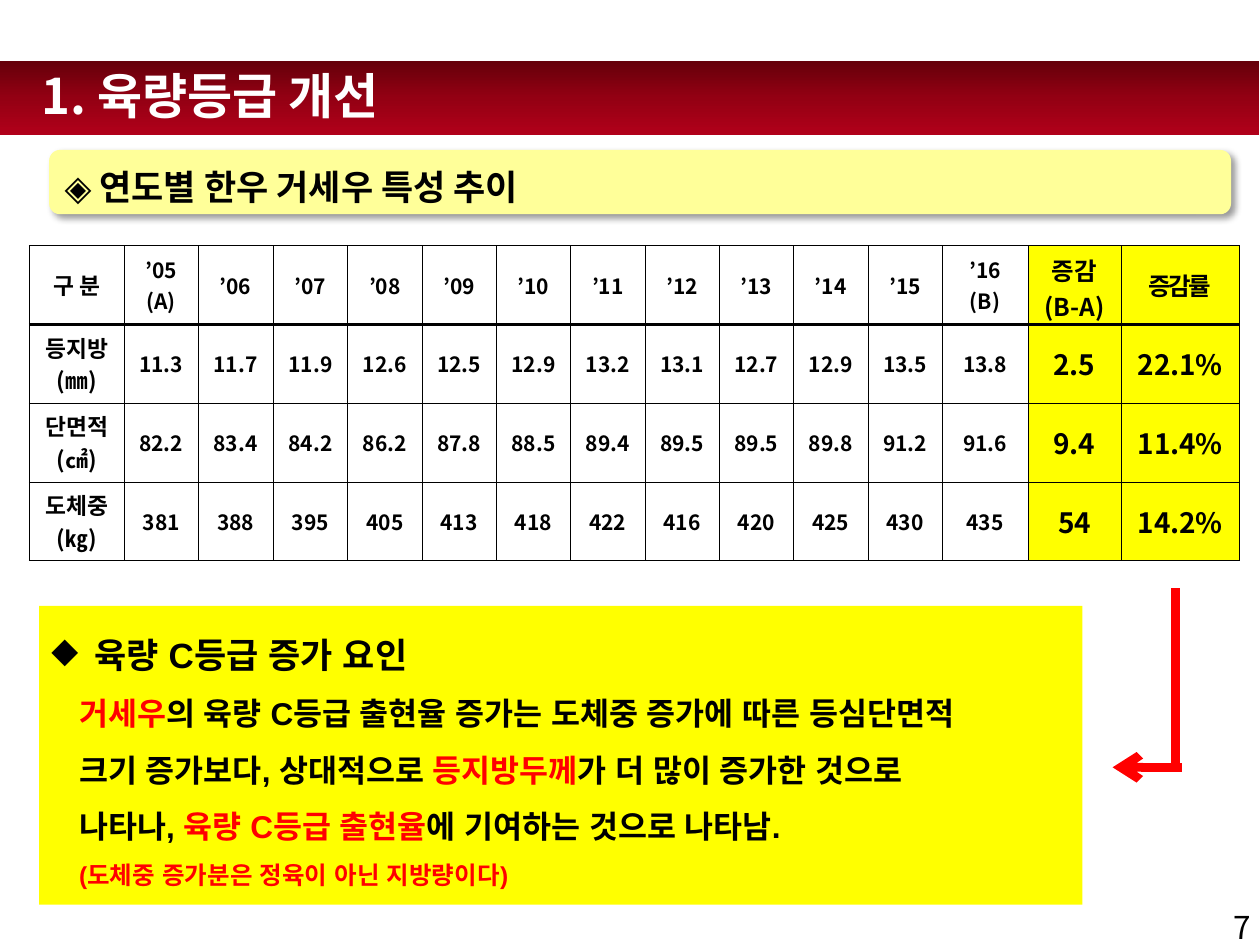
import lxml.etree
import pptx
import pptx.dml.color
import pptx.enum.shapes
import pptx.enum.text
import pptx.oxml.ns
import pptx.util

SLIDE_WIDTH, SLIDE_HEIGHT = 10, 7.5
COLORS = {
    "black": "000000", "white": "FFFFFF", "red": "FF0000", "yellow": "FFFF00",
    "cream": "FFFF99", "maroon": "65000A", "wine": "940013", "crimson": "B1001A",
}
KOREAN = "Noto Sans CJK KR"
SHAPES = pptx.enum.shapes.MSO_SHAPE
ALIGN = pptx.enum.text.PP_ALIGN
ANCHOR = pptx.enum.text.MSO_ANCHOR
THIN, THICK = 0.28, 1.98
COLUMN_SHARES = [7.6, 5.8, 6] + [5.9] * 9 + [6.8, 7.4, 9.4]
ROW_SHARE = 8.33
FIRST_CHANGE_COLUMN = 13
ROWS = [
    ["구 분", "’05\n(A)", *[f"’{year:02}" for year in range(6, 16)],
     "’16\n(B)", "증감\n(B-A)", "증감률"],
    ["등지방\n(㎜)", "11.3", "11.7", "11.9", "12.6", "12.5", "12.9", "13.2", "13.1",
     "12.7", "12.9", "13.5", "13.8", "2.5", "22.1%"],
    ["단면적\n(㎠)", "82.2", "83.4", "84.2", "86.2", "87.8", "88.5", "89.4", "89.5",
     "89.5", "89.8", "91.2", "91.6", "9.4", "11.4%"],
    ["도체중\n(㎏)", "381", "388", "395", "405", "413", "418", "422", "416",
     "420", "425", "430", "435", "54", "14.2%"],
]
CAUSES = [
    [("거세우", "red"), ("의 육량 C등급 출현율 증가는 도체중 증가에 따른 등심단면적", "black")],
    [("크기 증가보다, 상대적으로 ", "black"), ("등지방두께", "red"),
     ("가 더 많이 증가한 것으로", "black")],
    [("나타나, ", "black"), ("육량 C등급 출현율", "red"),
     ("에 기여하는 것으로 나타남.", "black")],
]


def across(percent):
    return pptx.util.Inches(SLIDE_WIDTH * percent / 100)


def down(percent):
    return pptx.util.Inches(SLIDE_HEIGHT * percent / 100)


def place(left, top, width, height):
    return across(left), down(top), across(width), down(height)


def rgb(color):
    return pptx.dml.color.RGBColor.from_string(COLORS[color])


def add_xml(parent, tag, **attributes):
    return lxml.etree.SubElement(parent, pptx.oxml.ns.qn(tag), attributes)


def add_span(para, text, size, color="black", font=KOREAN, bold=True, spacing=0):
    span = para.add_run()
    span.text = text
    span.font.size = pptx.util.Pt(size)
    span.font.bold = bold
    span.font.color.rgb = rgb(color)
    span.font.name = font
    properties = span.font._element
    add_xml(properties, "a:ea", typeface=font)
    if spacing:
        properties.set("spc", str(int(spacing * 100)))


def add_para(frame, spans, size, align=ALIGN.LEFT, line_spacing=None, indent=0,
             bullet=None, **style):
    first = frame.paragraphs[0]
    para = frame.add_paragraph() if first.runs else first
    para.alignment = align
    if line_spacing:
        para.line_spacing = line_spacing
    properties = para._p.get_or_add_pPr()
    if indent:
        properties.set("marL", str(across(indent)))
    if bullet:
        properties.set("indent", str(-across(indent)))
        add_xml(properties, "a:buChar", char=bullet)
    for text, color in spans:
        add_span(para, text, size, color, **style)


def add_text(page, bounds, text, size, color, align=ALIGN.LEFT, inset=1, bold=True):
    frame = page.shapes.add_textbox(*bounds).text_frame
    frame.word_wrap = True
    frame.vertical_anchor = ANCHOR.MIDDLE
    frame.margin_left = across(inset)
    add_para(frame, [(text, color)], size, align, bold=bold)


def add_box(page, kind, bounds, fill):
    box = page.shapes.add_shape(kind, *bounds)
    box.shadow.inherit = False
    box.fill.solid()
    box.fill.fore_color.rgb = rgb(fill)
    box.line.fill.background()
    box.text_frame.word_wrap = True
    return box


def add_banner(page):
    banner = add_box(page, SHAPES.RECTANGLE, place(47, -56.27, 5.9, 133.33), "maroon")
    banner.rotation = 90
    banner.fill.gradient()
    banner.fill.gradient_angle = 0
    stops = banner._element.spPr.find(".//" + pptx.oxml.ns.qn("a:gsLst"))
    stops.clear()
    for position, color in [(0, "maroon"), (50, "wine"), (100, "crimson")]:
        stop = add_xml(stops, "a:gs", pos=str(position * 1000))
        add_xml(stop, "a:srgbClr", val=COLORS[color])


def add_heading(page):
    box = add_box(page, SHAPES.ROUNDED_RECTANGLE, place(3.9, 15.87, 93.8, 6.8), "cream")
    effects = box._element.spPr.find(pptx.oxml.ns.qn("a:effectLst"))
    shadow = add_xml(effects, "a:outerShdw", blurRad=str(pptx.util.Pt(4)),
                     dist=str(pptx.util.Pt(3)), dir=str(45 * 60000), rotWithShape="0")
    shade = add_xml(shadow, "a:srgbClr", val=COLORS["black"])
    add_xml(shade, "a:alpha", val="40000")
    box.text_frame.vertical_anchor = ANCHOR.MIDDLE
    add_para(box.text_frame, [("◈ 연도별 한우 거세우 특성 추이", "black")], 20,
             line_spacing=1.2)


def set_borders(cell, top, bottom):
    properties = cell._tc.get_or_add_tcPr()
    for side, width in [("L", THIN), ("R", THIN), ("T", top), ("B", bottom)]:
        line = add_xml(properties, f"a:ln{side}", w=str(pptx.util.Pt(width)))
        fill = add_xml(line, "a:solidFill")
        add_xml(fill, "a:srgbClr", val=COLORS["black"])


def cell_size(row, column):
    if column == 0:
        return 13
    if column < FIRST_CHANGE_COLUMN:
        return 12
    return 14 if row == 0 else 16


def fill_cell(cell, text, row, column):
    set_borders(cell, THICK if row == 1 else THIN, THICK if row == 0 else THIN)
    if column >= FIRST_CHANGE_COLUMN:
        cell.fill.solid()
        cell.fill.fore_color.rgb = rgb("yellow")
    else:
        cell.fill.background()
    cell.margin_left = cell.margin_right = across(0.2)
    cell.vertical_anchor = ANCHOR.MIDDLE
    spacing = -1.5 if text == "증감률" else 0
    for line in text.split("\n"):
        add_para(cell.text_frame, [(line, "black")], cell_size(row, column),
                 ALIGN.CENTER, spacing=spacing)


def add_trend_table(page):
    bounds = place(2.3, 26, sum(COLUMN_SHARES), ROW_SHARE * len(ROWS))
    table = page.shapes.add_table(len(ROWS), len(COLUMN_SHARES), *bounds).table
    table.first_row = table.horz_banding = False
    for column, share in zip(table.columns, COLUMN_SHARES):
        column.width = across(share)
    for row, texts in enumerate(ROWS):
        table.rows[row].height = down(ROW_SHARE)
        for column, text in enumerate(texts):
            fill_cell(table.cell(row, column), text, row, column)


def add_causes(page):
    box = add_box(page, SHAPES.RECTANGLE, place(3.1, 64.13, 82.8, 31.6), "yellow")
    frame = box.text_frame
    frame.vertical_anchor = ANCHOR.TOP
    style = {"align": ALIGN.JUSTIFY, "line_spacing": 1.5, "font": "Arial"}
    add_para(frame, [("육량 C등급 증가 요인", "black")], 20, indent=3.4, bullet="◆", **style)
    for spans in CAUSES:
        add_para(frame, spans, 18, indent=2.2, **style)
    add_para(frame, [("(도체중 증가분은 정육이 아닌 지방량이다)", "red")], 14,
             indent=2.2, **style)


def add_line(group, start, end, arrow=False):
    line = group.shapes.add_connector(
        pptx.enum.shapes.MSO_CONNECTOR.STRAIGHT,
        across(start[0]), down(start[1]), across(end[0]), down(end[1]))
    line.line.color.rgb = rgb("red")
    line.line.width = pptx.util.Pt(5)
    if arrow:
        add_xml(line.line._get_or_add_ln(), "a:tailEnd", type="arrow")
    add_xml(line._element.spPr, "a:effectLst")


def add_bent_arrow(page):
    group = page.shapes.add_group_shape()
    add_line(group, (93.3, 62.27), (93.3, 81.07))
    add_line(group, (93.8, 81.2), (88.3, 81.2), arrow=True)


def main():
    deck = pptx.Presentation()
    deck.slide_width, deck.slide_height = across(100), down(100)
    page = deck.slides.add_slide(deck.slide_layouts[6])
    add_text(page, place(77, 95.47, 23.3, 5.33), "7", 18, "black", ALIGN.RIGHT, bold=False)
    add_banner(page)
    add_text(page, place(1.4, 1.73, 90, 16.67), "1. 육량등급 개선", 28, "white", inset=1.9)
    add_heading(page)
    add_trend_table(page)
    add_causes(page)
    add_bent_arrow(page)
    deck.save("out.pptx")


if __name__ == "__main__":
    main()
